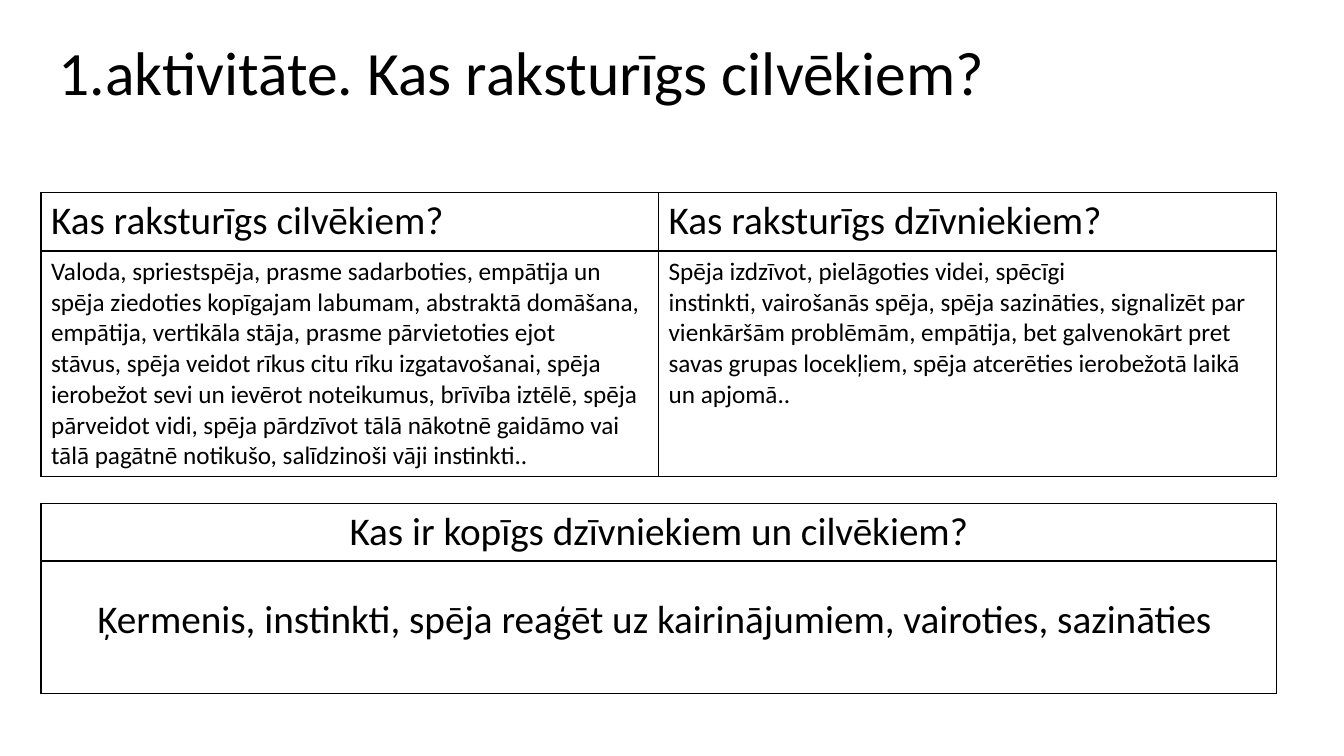
import pptx
import pptx.util
import pptx.dml.color
import pptx.enum.text
import pptx.oxml
import pptx.oxml.ns

Pt = pptx.util.Pt
ALIGN = pptx.enum.text.PP_ALIGN
ANCHOR = pptx.enum.text.MSO_ANCHOR
INK = "000000"
FONT = "Calibri"
HARD_SPACE = chr(160)

# A tilde stands for a space that must not break the line
HUMANS = (
    "Valoda, spriestspēja, prasme sadarboties, empātija un spēja ziedoties~kopīgajam labumam, "
    "abstraktā domāšana, empātija, vertikāla stāja, prasme pārvietoties~ejot stāvus,~spēja "
    "veidot rīkus citu rīku izgatavošanai, spēja ierobežot sevi un ievērot noteikumus, brīvība "
    "iztēlē, spēja pārveidot vidi, spēja pārdzīvot tālā nākotnē gaidāmo vai tālā pagātnē "
    "notikušo, salīdzinoši~vāji instinkti..")
ANIMALS = (
    "Spēja izdzīvot, pielāgoties videi, spēcīgi instinkti,~vairošanās spēja, spēja sazināties, "
    "signalizēt par vienkāršām problēmām, empātija, bet galvenokārt pret savas grupas locekļiem, "
    "spēja~atcerēties ierobežotā~laikā un apjomā..")
SHARED = "Ķermenis, instinkti, spēja~reaģēt uz kairinājumiem, vairoties, sazināties"


def color(value):
    return pptx.dml.color.RGBColor.from_string(value)


def style(para, size, align):
    para.alignment = align
    para.font.name = FONT
    para.font.size = Pt(size)
    para.font.bold = False
    para.font.color.rgb = color(INK)


def add_borders(cell):
    properties = cell._tc.get_or_add_tcPr()
    for position, side in enumerate(("lnL", "lnR", "lnT", "lnB")):
        line = pptx.oxml.parse_xml(
            f'<a:{side} {pptx.oxml.ns.nsdecls("a")} w="{Pt(1)}"><a:solidFill>'
            f'<a:srgbClr val="{INK}"/></a:solidFill></a:{side}>')
        properties.insert(position, line)


def add_title(page, box, text):
    title = page.shapes.title
    title.left, title.top, title.width, title.height = map(Pt, box)
    frame = title.text_frame
    frame.text = text
    frame.vertical_anchor = ANCHOR.MIDDLE
    frame.paragraphs[0].line_spacing = 0.9
    style(frame.paragraphs[0], 44, ALIGN.LEFT)


def add_row_table(page, box, texts, size, align=ALIGN.LEFT):
    """Place a one-row table with equal columns and return its cells."""
    table = page.shapes.add_table(1, len(texts), *map(Pt, box)).table
    table.first_row = table.horz_banding = False
    for cell, text in zip(table.rows[0].cells, texts):
        cell.text = text.replace("~", HARD_SPACE)
        cell.fill.background()
        add_borders(cell)
        style(cell.text_frame.paragraphs[0], size, align)
    return table.rows[0].cells


def add_comparison(page, box):
    left, top, width, height = box
    heading = 42
    add_row_table(page, (left, top, width, 41),
                  ["Kas raksturīgs cilvēkiem?", "Kas raksturīgs dzīvniekiem?"], 28)
    add_row_table(page, (left, top + heading, width, height - heading), [HUMANS, ANIMALS], 18)


def add_common_traits(page, box):
    left, top, width, height = box
    heading = 41
    add_row_table(page, (left, top, width, heading),
                  ["Kas ir kopīgs~dzīvniekiem un cilvēkiem?"], 28, ALIGN.CENTER)
    answer = add_row_table(page, (left, top + heading, width, height - heading),
                           [SHARED], 28, ALIGN.CENTER)[0]
    answer.vertical_anchor = ANCHOR.MIDDLE
    answer.margin_bottom = Pt(14)
    answer.margin_right = Pt(13.6)


def main():
    deck = pptx.Presentation()
    deck.slide_width, deck.slide_height = Pt(960), Pt(540)
    page = deck.slides.add_slide(deck.slide_layouts[5])

    # Title
    add_title(page, (34.5, 19.5, 778, 68.5), "1.aktivitāte. Kas raksturīgs cilvēkiem?")
    # Humans and animals side by side
    add_comparison(page, (29.3, 137.5, 882.2, 203))
    # What they share
    add_common_traits(page, (29.3, 359.6, 882.4, 136))

    deck.save("out.pptx")


if __name__ == "__main__":
    main()
